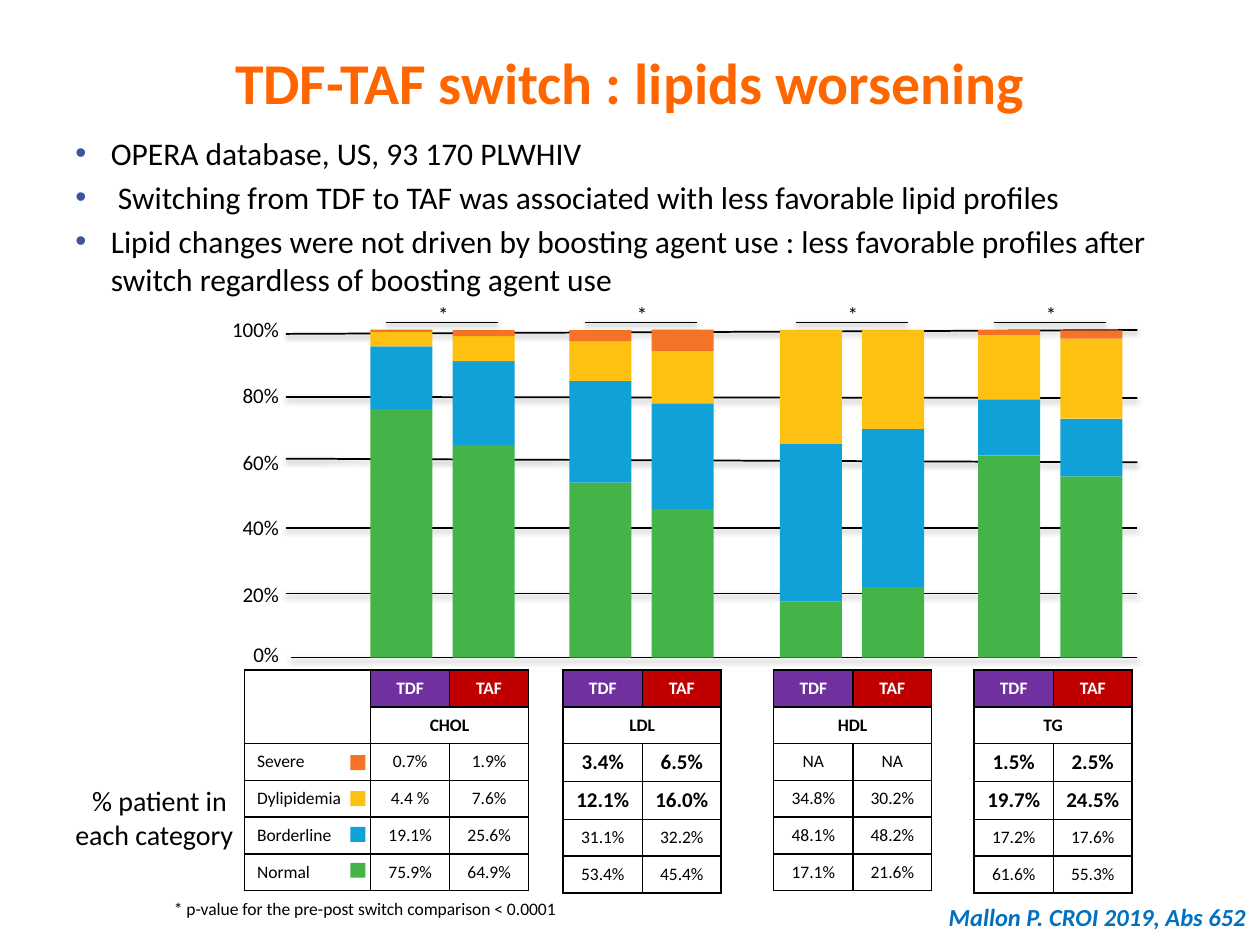
from lxml import etree
from pptx import Presentation
from pptx.dml.color import RGBColor
from pptx.enum.shapes import MSO_CONNECTOR as CONN, MSO_SHAPE as SHAPE
from pptx.enum.text import MSO_ANCHOR as ANCHOR, MSO_AUTO_SIZE as AUTO, PP_ALIGN as ALIGN
from pptx.oxml import parse_xml
from pptx.oxml.ns import nsdecls, qn
from pptx.util import Pt

COLORS = {
    "title": "FF6600", "text": "000000", "bullet": "3C549F", "source": "0070C0",
    "white": "FFFFFF", "TDF": "7030A0", "TAF": "C00000",
    "Severe": "F47326", "Dylipidemia": "FEC011",
    "Borderline": "11A1D9", "Normal": "44B448",
}
LEVELS = ["Severe", "Dylipidemia", "Borderline", "Normal"]
DRUGS = ["TDF", "TAF"]

# name, left of first bar, left of table, emphasised levels, (TDF, TAF) per level
GROUPS = [
    ("CHOL", 211.7, 139.7, 0,
     [("0.7%", "1.9%"), ("4.4 %", "7.6%"), ("19.1%", "25.6%"), ("75.9%", "64.9%")]),
    ("LDL", 325.4, 321.8, 2,
     [("3.4%", "6.5%"), ("12.1%", "16.0%"), ("31.1%", "32.2%"), ("53.4%", "45.4%")]),
    ("HDL", 445.7, 442.1, 0,
     [("NA", "NA"), ("34.8%", "30.2%"), ("48.1%", "48.2%"), ("17.1%", "21.6%")]),
    ("TG", 559, 556.6, 2,
     [("1.5%", "2.5%"), ("19.7%", "24.5%"), ("17.2%", "17.6%"), ("61.6%", "55.3%")]),
]
BULLETS = [
    "OPERA database, US, 93 170 PLWHIV",
    " Switching from TDF to TAF was associated with less favorable lipid profiles",
    "Lipid changes were not driven by boosting agent use : less favorable "
    "profiles after switch regardless of boosting agent use",
]
# label, label top, line start x, line start y, line end y
GRID = [
    ("100%", 177.1, 163.4, 190.8, 188.6), ("80%", 215.3, 163.4, 226.8, 227.5),
    ("60%", 253.4, 163.4, 262.1, 264.2), ("40%", 290.2, 163.4, 301.7, 301.7),
    ("20%", 329, 163.4, 339.1, 339.1), ("0%", 362.9, 166.3, 375.8, 375.8),
]
BASE, FULL = 375.8, 187.2    # zero line and height of 100%
BAR_W, BAR_STEP = 35.5, 47
ROW_H, TABLE_TOP = 21, 383


def write(p, text, size=12, color="text", bold=False, italic=False,
          align=ALIGN.LEFT, font="Calibri"):
    p.alignment = align
    for i, line in enumerate(text.split("\n")):
        if i:
            p.add_line_break()
        r = p.add_run()
        r.text = line
        r.font.name, r.font.size = font, Pt(size)
        r.font.bold, r.font.italic = bold, italic
        r.font.color.rgb = RGBColor.from_string(COLORS[color])


def percent(label):
    return 0 if label == "NA" else float(label.rstrip("% "))


class SlideBuilder:
    def __init__(self, slide):
        self.shapes = slide.shapes

    def frame(self, x, y, w, h, wrap=True, anchor=ANCHOR.TOP):
        tf = self.shapes.add_textbox(Pt(x), Pt(y), Pt(w), Pt(h)).text_frame
        tf.word_wrap, tf.vertical_anchor = wrap, anchor
        tf.auto_size = AUTO.NONE if wrap else AUTO.SHAPE_TO_FIT_TEXT
        return tf

    def label(self, text, x, y, w, h, **fmt):
        write(self.frame(x, y, w, h, wrap=False).paragraphs[0], text, **fmt)

    def title(self, text, x, y, w, h):
        tf = self.frame(x, y, w, h, anchor=ANCHOR.MIDDLE)
        write(tf.paragraphs[0], text, size=33, color="title", bold=True, align=ALIGN.CENTER)

    def bullets(self, items, x, y, w, h):
        tf = self.frame(x, y, w, h)
        for i, text in enumerate(items):
            p = tf.add_paragraph() if i else tf.paragraphs[0]
            if i:
                p.space_before = Pt(3.6)
            pPr = p._p.get_or_add_pPr()
            pPr.set("marL", str(Pt(20.25)))
            pPr.set("indent", str(-Pt(20.25)))
            clr = etree.SubElement(pPr, qn("a:buClr"))
            etree.SubElement(clr, qn("a:srgbClr"), val=COLORS["bullet"])
            etree.SubElement(pPr, qn("a:buFont"), typeface="Arial")
            etree.SubElement(pPr, qn("a:buChar"), char="•")
            write(p, text, size=18)

    def line(self, x1, y1, x2, y2):
        c = self.shapes.add_connector(CONN.STRAIGHT, Pt(x1), Pt(y1), Pt(x2), Pt(y2))
        c.line.width = Pt(1)
        c.line.color.rgb = RGBColor.from_string(COLORS["text"])
        c._element.spPr.append(parse_xml(
            f'<a:effectLst {nsdecls("a")}><a:outerShdw blurRad="{Pt(3.1)}" '
            f'dist="{Pt(1.6)}" dir="5400000" rotWithShape="0"><a:srgbClr val="000000">'
            '<a:alpha val="38000"/></a:srgbClr></a:outerShdw></a:effectLst>'))

    def rect(self, x, y, w, h, color):
        sp = self.shapes.add_shape(SHAPE.RECTANGLE, Pt(x), Pt(y), Pt(w), Pt(h))
        sp.shadow.inherit = False
        sp.fill.solid()
        sp.fill.fore_color.rgb = RGBColor.from_string(COLORS[color])
        sp.line.fill.background()

    def cell(self, cell, text, fill=None, **fmt):
        tcPr = cell._tc.get_or_add_tcPr()
        for side in ("L", "R", "T", "B"):
            tcPr.append(parse_xml(
                f'<a:ln{side} {nsdecls("a")} w="{Pt(1)}"><a:solidFill><a:srgbClr '
                f'val="{COLORS["text"]}"/></a:solidFill></a:ln{side}>'))
        if fill:
            cell.fill.solid()
            cell.fill.fore_color.rgb = RGBColor.from_string(COLORS[fill])
        else:
            cell.fill.background()
        cell.vertical_anchor = ANCHOR.MIDDLE
        p = cell.text_frame.paragraphs[0]
        if text:
            write(p, text, **{"size": 10, **fmt})
        else:
            # An empty cell must not stretch its row
            cell.margin_top = cell.margin_bottom = 0
            etree.SubElement(p._p, qn("a:endParaRPr"), sz="1000")

    def table(self, name, x, y, values, emphasised, with_levels):
        first = int(with_levels)
        widths = [72] * first + [45.3, 45]
        rows = 2 + len(values)
        table = self.shapes.add_table(rows, len(widths), Pt(x), Pt(y),
                                      Pt(sum(widths)), Pt(rows * ROW_H)).table
        table.first_row = table.horz_banding = False
        for col, width in zip(table.columns, widths):
            col.width = Pt(width)
        for row in table.rows:
            row.height = Pt(ROW_H)
        if with_levels:
            table.cell(0, 0).merge(table.cell(1, 0))
            for r, level in enumerate(["", ""] + LEVELS):
                self.cell(table.cell(r, 0), level)
        table.cell(1, first).merge(table.cell(1, first + 1))
        for c, drug in enumerate(DRUGS):
            self.cell(table.cell(0, first + c), drug, fill=drug, color="white",
                      bold=True, align=ALIGN.CENTER)
            self.cell(table.cell(1, first + c), "" if c else name, bold=True,
                      align=ALIGN.CENTER)
            for r, pair in enumerate(values):
                strong = r < emphasised
                self.cell(table.cell(2 + r, first + c), pair[c], bold=strong,
                          size=12 if strong else 10, align=ALIGN.CENTER)


def main():
    prs = Presentation()
    prs.slide_width, prs.slide_height = Pt(720), Pt(540)
    s = SlideBuilder(prs.slides.add_slide(prs.slide_layouts[6]))

    # Heading and bullets
    s.title("TDF-TAF switch : lipids worsening", 36, 1.5, 648, 90)
    s.bullets(BULLETS, 36, 73, 663, 110)

    # Axis labels and grid lines
    for text, top, x, y1, y2 in GRID:
        s.label(text, 124.5, top, 42, 21.8, align=ALIGN.RIGHT)
        s.line(x, y1, 650, y2)

    # Stacked bars, significance marks and tables
    for i, (name, bar_x, table_x, emphasised, values) in enumerate(GROUPS):
        for d in range(len(DRUGS)):
            y = BASE
            for level, pair in reversed(list(zip(LEVELS, values))):
                h = FULL * percent(pair[d]) / 100
                if h:
                    y -= h
                    s.rect(bar_x + d * BAR_STEP, y, BAR_W, h, level)
        s.line(bar_x + 9, 184.3, bar_x + 73, 184.3)
        s.label("*", bar_x + 31.5, 168.5, 20.9, 21.8)
        s.table(name, table_x, TABLE_TOP, values, emphasised, with_levels=i == 0)

    # Legend squares beside the levels
    for i, level in enumerate(LEVELS):
        s.rect(200.2, 431.5 + 20.5 * i, 8.6, 8.6, level)

    # Side caption, footnote and source
    s.label("% patient in \neach category", 34.6, 444.2, 105.8, 46, size=16,
            align=ALIGN.RIGHT)
    s.label("* p-value for the pre-post switch comparison < 0.0001",
            92.2, 509.8, 236.2, 19.4, size=10)
    s.label("Mallon P. CROI 2019, Abs 652", 535, 511.9, 189.4, 24.2, size=14,
            color="source", bold=True, italic=True)

    prs.save("out.pptx")


if __name__ == "__main__":
    main()
